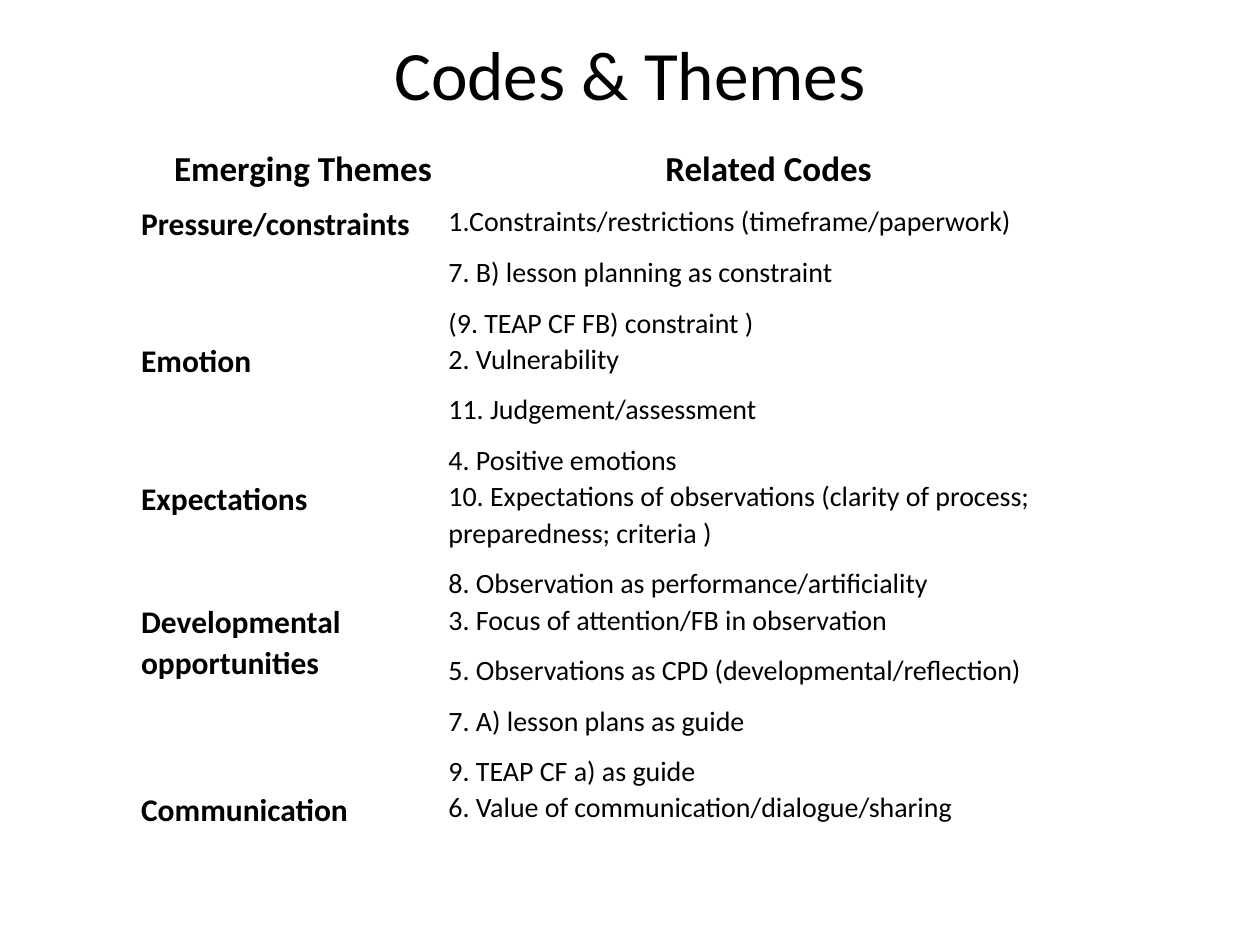
from pptx import Presentation
from pptx.dml.color import RGBColor
from pptx.enum.text import MSO_ANCHOR, PP_ALIGN
from pptx.util import Inches, Pt

TITLE = "Codes & Themes"
HEADINGS = ("Emerging Themes", "Related Codes")
# Theme, its codes, row height in inches
THEMES = [
    ("Pressure/constraints", [
        "1.Constraints/restrictions (timeframe/paperwork)",
        "7. B) lesson planning as constraint",
        "(9. TEAP CF FB) constraint )"], 1.09),
    ("Emotion", [
        "2. Vulnerability",
        "11. Judgement/assessment",
        "4. Positive emotions"], 1.09),
    ("Expectations", [
        "10. Expectations of observations (clarity of process; preparedness; criteria )",
        "8. Observation as performance/artificiality"], 0.98),
    ("Developmental opportunities", [
        "3. Focus of attention/FB in observation",
        "5. Observations as CPD (developmental/reflection)",
        "7. A) lesson plans as guide",
        "9. TEAP CF a) as guide"], 1.49),
    ("Communication", ["6. Value of communication/dialogue/sharing"], 0.56),
]
COLUMN_WIDTHS = (2.44, 5.2)
HEADING_HEIGHT = 0.46
TABLE_LEFT, TABLE_TOP = 1.06, 1.15
CELL_MARGIN, HEADING_INDENT = 0.06, 0.25


def color(value):
    return RGBColor.from_string(value)


def write(frame, lines, size, bold=False, align=PP_ALIGN.LEFT, spacing=1.07, after=8):
    frame.word_wrap = True
    for index, line in enumerate(lines):
        para = frame.add_paragraph() if index else frame.paragraphs[0]
        para.alignment = align
        para.line_spacing = spacing
        para.space_after = Pt(after)
        span = para.add_run()
        span.text = line
        span.font.name = "Calibri"
        span.font.size = Pt(size)
        span.font.bold = bold
        span.font.color.rgb = color("000000")


deck = Presentation()
deck.slide_width, deck.slide_height = Inches(10), Inches(7.5)
page = deck.slides.add_slide(deck.slide_layouts[6])

# Title
box = page.shapes.add_textbox(Inches(0.5), Inches(0.25), Inches(9), Inches(0.7))
box.text_frame.margin_top = box.text_frame.margin_bottom = 0
box.text_frame.vertical_anchor = MSO_ANCHOR.TOP
write(box.text_frame, [TITLE], 39.6, align=PP_ALIGN.CENTER, spacing=1.0, after=0)

# Table grid
heights = [HEADING_HEIGHT] + [height for _, _, height in THEMES]
table = page.shapes.add_table(
    len(heights), len(COLUMN_WIDTHS), Inches(TABLE_LEFT), Inches(TABLE_TOP),
    Inches(sum(COLUMN_WIDTHS)), Inches(sum(heights))).table
table.first_row = table.horz_banding = False
for column, width in zip(table.columns, COLUMN_WIDTHS):
    column.width = Inches(width)
for row, height in zip(table.rows, heights):
    row.height = Inches(height)
for cell in table.iter_cells():
    cell.fill.background()
    cell.margin_left = cell.margin_right = Inches(CELL_MARGIN)
    cell.margin_top = cell.margin_bottom = 0

# Headings
for column, heading in enumerate(HEADINGS):
    write(table.cell(0, column).text_frame, [heading], 20, bold=True, align=PP_ALIGN.CENTER)
table.cell(0, 0).margin_left = Inches(CELL_MARGIN + HEADING_INDENT)

# Themes and their codes
for row, (theme, codes, _) in enumerate(THEMES, start=1):
    write(table.cell(row, 0).text_frame, [theme], 18, bold=True)
    write(table.cell(row, 1).text_frame, codes, 16)

deck.save("out.pptx")
